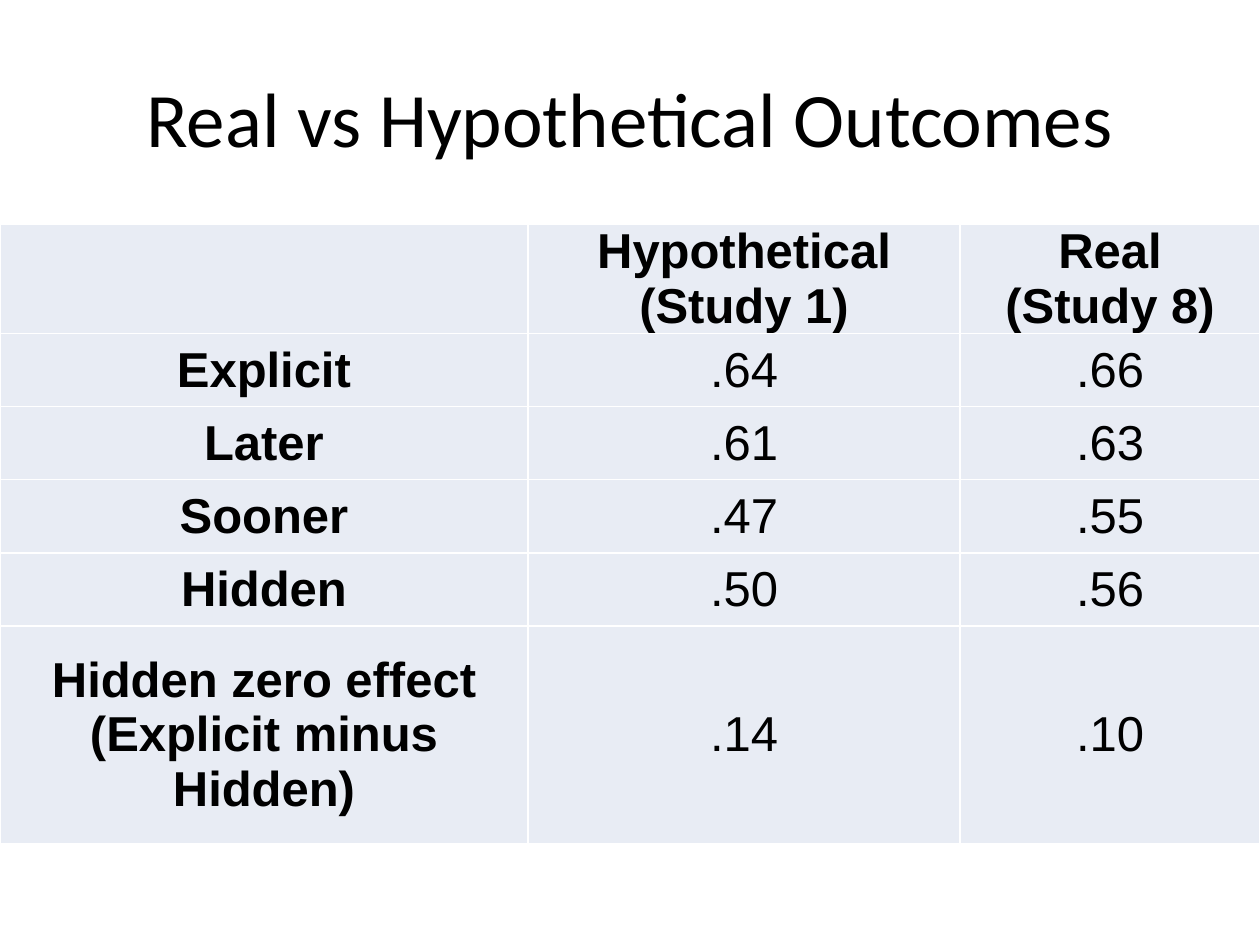
from pptx import Presentation
from pptx import util as u
from pptx.dml.color import RGBColor
from pptx.enum import text
from pptx.oxml import parse_xml
from pptx.oxml.ns import nsdecls

BLACK = RGBColor(0x00, 0x00, 0x00)
WHITE = RGBColor(0xFF, 0xFF, 0xFF)
PALE = RGBColor(0xE8, 0xEC, 0xF4)

ROWS = [
    ("", "Hypothetical\n(Study 1)", "Real\n(Study 8)"),
    ("Explicit", ".64", ".66"),
    ("Later", ".61", ".63"),
    ("Sooner", ".47", ".55"),
    ("Hidden", ".50", ".56"),
    ("Hidden zero effect (Explicit minus Hidden)", ".14", ".10"),
]
WIDTHS = (4.19, 3.43, 2.38)
HEIGHTS = (0.58,) * 5 + (1.73,)


class Deck:
    """Holds the style and the current slide."""

    def __init__(self):
        self.prs = Presentation()
        self.prs.slide_width = u.Inches(10)
        self.prs.slide_height = u.Inches(7.5)
        self.slide = self.prs.slides.add_slide(self.prs.slide_layouts[5])

    def label(self, frame, words, font, size, bold=False):
        frame.text = words
        for para in frame.paragraphs:
            para.alignment = text.PP_ALIGN.CENTER
            para.font.name = font
            para.font.size = u.Pt(size)
            para.font.bold = bold
            para.font.color.rgb = BLACK

    def title(self, words):
        box = self.slide.shapes.title
        box.left, box.top = u.Inches(0.5), u.Inches(0.3)
        box.width, box.height = u.Inches(9), u.Inches(1.25)
        box.text_frame.vertical_anchor = text.MSO_ANCHOR.MIDDLE
        self.label(box.text_frame, words, "Calibri", 44)

    def border(self, cell):
        props = cell._tc.get_or_add_tcPr()
        for side in ("lnL", "lnR", "lnT", "lnB"):
            props.append(parse_xml(
                f'<a:{side} {nsdecls("a")} w="{u.Pt(1)}"><a:solidFill>'
                f'<a:srgbClr val="{WHITE}"/></a:solidFill></a:{side}>'))

    def cell(self, cell, words, bold):
        self.label(cell.text_frame, words, "Arial", 28, bold)
        cell.vertical_anchor = text.MSO_ANCHOR.MIDDLE
        cell.margin_left = cell.margin_right = u.Inches(0.07)
        cell.margin_top = cell.margin_bottom = 0
        self.border(cell)
        cell.fill.solid()
        cell.fill.fore_color.rgb = PALE

    def table(self, rows, widths, heights, top):
        grid = self.slide.shapes.add_table(
            len(rows), len(widths), 0, u.Inches(top),
            u.Inches(sum(widths)), u.Inches(sum(heights))).table
        grid.first_row = grid.horz_banding = False
        for col, width in zip(grid.columns, widths):
            col.width = u.Inches(width)
        for i, (row, height) in enumerate(zip(rows, heights)):
            grid.rows[i].height = u.Inches(height)
            for j, words in enumerate(row):
                self.cell(grid.cell(i, j), words, i == 0 or j == 0)


def main():
    deck = Deck()
    deck.title("Real vs Hypothetical Outcomes")
    deck.table(ROWS, WIDTHS, HEIGHTS, 1.78)
    deck.prs.save("out.pptx")


if __name__ == "__main__":
    main()
